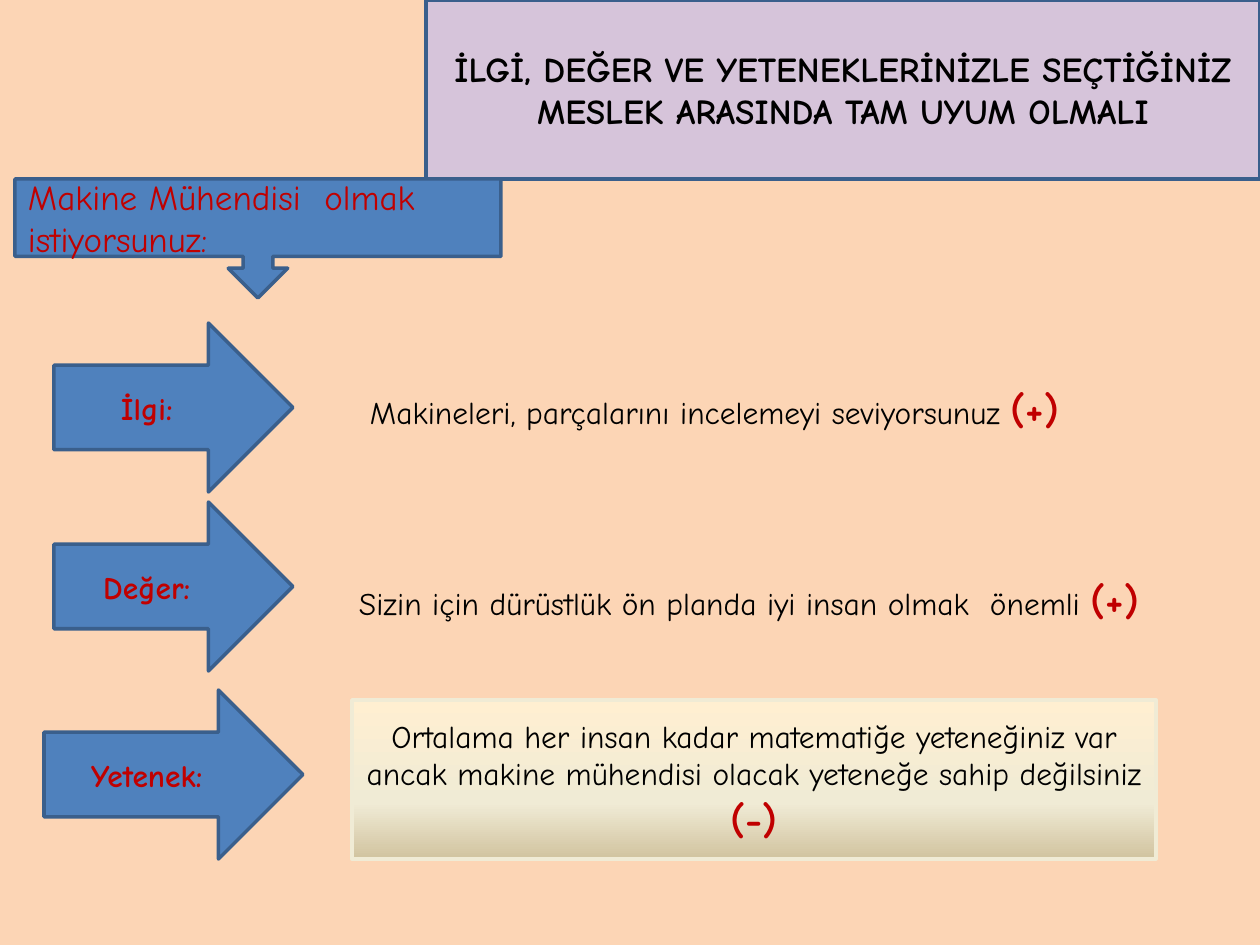
from copy import deepcopy

from pptx import Presentation
from pptx.dml.color import RGBColor
from pptx.enum.shapes import MSO_SHAPE
from pptx.enum.text import MSO_ANCHOR, PP_ALIGN
from pptx.util import Emu, Pt

SCALE = 914400 / 126  # EMU per px
FONT = "Comic Neue"
COLORS = {
    "background": "FCD5B5", "title": "D6C4DA", "blue": "4F81BD",
    "outline": "3A5F8C", "black": "000000", "red": "C00000", "cream": "F0EBD5",
}
GRADIENT = [(0, "FFEFD1"), (0.65, "F0EBD5"), (1, "D1C39F")]


def px(length):
    return Emu(round(length * SCALE))


def write_text(shape, text, size=18, color="black", bold=False, sign="",
               align=PP_ALIGN.CENTER, margins=(13, 6)):
    """Write one paragraph, optionally ending in a large red sign."""
    frame = shape.text_frame
    frame.word_wrap = True
    frame.vertical_anchor = MSO_ANCHOR.MIDDLE
    frame.margin_left = frame.margin_right = px(margins[0])
    frame.margin_top = frame.margin_bottom = px(margins[1])
    paragraph = frame.paragraphs[0]
    paragraph.alignment = align
    runs = [(text, size, color, bold)]
    if sign:
        runs.append((sign, 24, "red", True))
    for words, points, ink, weight in runs:
        run = paragraph.add_run()
        run.text = words
        run.font.name = FONT
        run.font.size = Pt(points)
        run.font.bold = weight
        run.font.color.rgb = RGBColor.from_string(COLORS[ink])


def add_box(kind, left, top, width, height, fill="blue", line="outline"):
    shape = slide.shapes.add_shape(kind, px(left), px(top), px(width), px(height))
    shape.shadow.inherit = False
    shape.fill.solid()
    shape.fill.fore_color.rgb = RGBColor.from_string(COLORS[fill])
    shape.line.color.rgb = RGBColor.from_string(COLORS[line])
    shape.line.width = Pt(2)
    return shape


presentation = Presentation()
presentation.slide_width, presentation.slide_height = px(1260), px(945)
slide = presentation.slides.add_slide(presentation.slide_layouts[6])
slide.background.fill.solid()
slide.background.fill.fore_color.rgb = RGBColor.from_string(COLORS["background"])

# Statements beside the first two arrows
statements = [
    (370, 408, "Makineleri, parçalarını incelemeyi seviyorsunuz "),
    (359, 599, "Sizin için dürüstlük ön planda iyi insan olmak  önemli "),
]
for left, middle, text in statements:
    box = slide.shapes.add_textbox(px(left), px(middle - 25), px(830), px(50))
    write_text(box, text, sign="(+)", align=PP_ALIGN.LEFT, margins=(0, 0))

# Title
title = add_box(MSO_SHAPE.RECTANGLE, 426, 0, 834, 179, fill="title")
write_text(title, "İLGİ, DEĞER VE YETENEKLERİNİZLE SEÇTİĞİNİZ MESLEK ARASINDA TAM UYUM OLMALI",
           size=20, bold=True)

# Arrows
arrows = [(54, 323, 239, "İlgi: "), (54, 502, 239, "Değer: "), (44, 690, 259, "Yetenek: ")]
for left, top, width, label in arrows:
    arrow = add_box(MSO_SHAPE.RIGHT_ARROW, left, top, width, 169)
    write_text(arrow, label, color="red", bold=True)

# Ability statement with a three-stop gradient
ability = add_box(MSO_SHAPE.RECTANGLE, 352, 700, 804, 159, line="cream")
ability.fill.gradient()
ability.fill.gradient_angle = 270
stop_list = ability.fill._fill._gradFill.gsLst
stop_list.insert(1, deepcopy(stop_list[0]))
for stop, (position, color) in zip(ability.fill.gradient_stops, GRADIENT):
    stop.position = position
    stop.color.rgb = RGBColor.from_string(color)
write_text(ability, "Ortalama her insan kadar matematiğe yeteneğiniz var ancak makine "
           "mühendisi olacak yeteneğe sahip değilsiniz ", sign="(-)")

# Chosen profession
callout = add_box(MSO_SHAPE.DOWN_ARROW_CALLOUT, 15, 179, 486, 119)
write_text(callout, "Makine Mühendisi  olmak istiyorsunuz:", size=20, color="red",
           align=PP_ALIGN.LEFT)

presentation.save("out.pptx")
